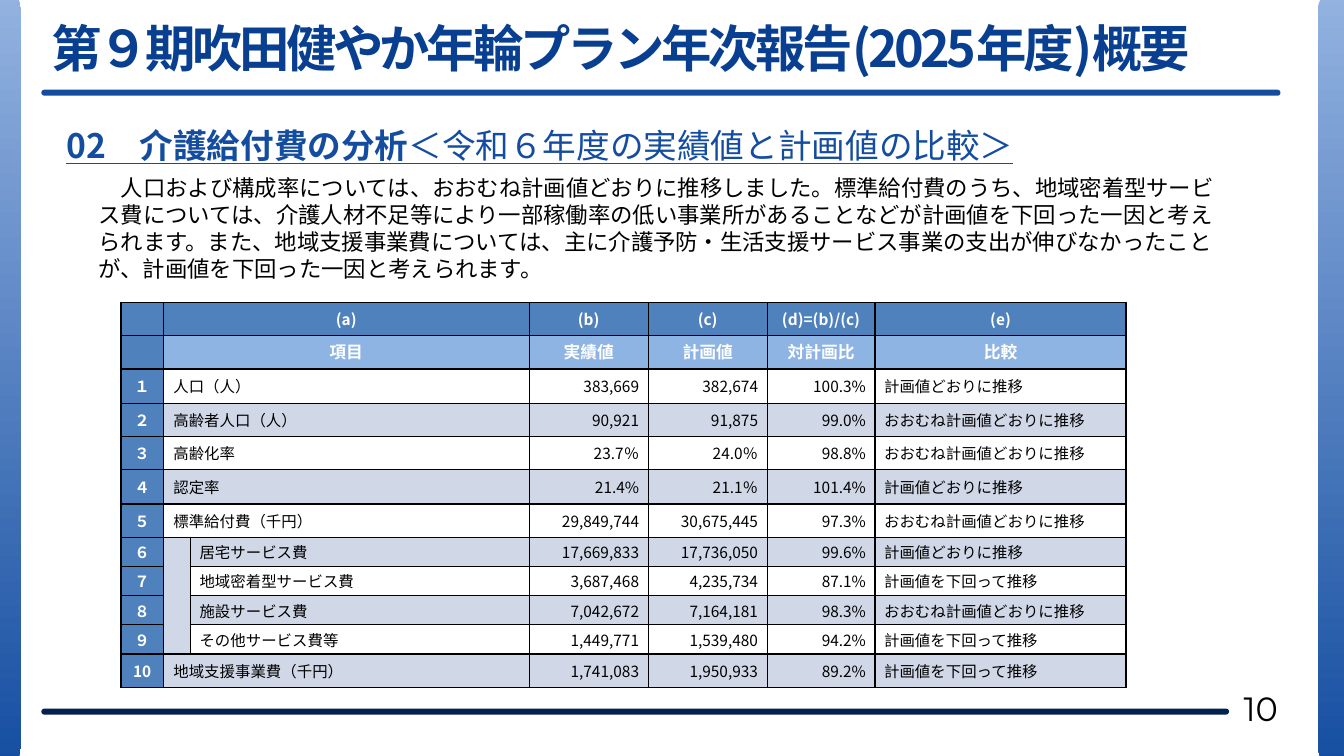
from lxml.etree import SubElement as Sub
from pptx import Presentation
from pptx.dml.color import RGBColor as RGB
from pptx.enum.shapes import MSO_SHAPE as SHAPE
from pptx.enum.text import MSO_ANCHOR as ANCHOR, MSO_AUTO_SIZE as FIT, PP_ALIGN as ALIGN
from pptx.oxml.ns import qn
from pptx.util import Pt

PX = 9144
SANS = "Noto Sans CJK JP"
HUES = {
    "title": "083F90", "blue": "144DA0", "navy": "03214E", "pale": "95B4E1",
    "head": "4F81BD", "sub": "8EB4E3", "band": "D0D8E8",
    "white": "FFFFFF", "black": "000000",
}
COLS = [42, 27, 336, 118, 118, 107, 249]
ROWS = [33, 33, 34] * 2 + [33] + [29] * 4 + [33]
HEADS = [
    ["(a)", "(b)", "(c)", "(d)=(b)/(c)", "(e)"],
    ["項目", "実績値", "計画値", "対計画比", "比較"],
]
SAME = "計画値どおりに推移"
NEAR = "おおむね計画値どおりに推移"
LOW = "計画値を下回って推移"
DATA = [
    ["１", "人口（人）", "383,669", "382,674", "100.3%", SAME],
    ["２", "高齢者人口（人）", "90,921", "91,875", "99.0%", NEAR],
    ["３", "高齢化率", "23.7％", "24.0％", "98.8%", NEAR],
    ["４", "認定率", "21.4%", "21.1％", "101.4%", SAME],
    ["５", "標準給付費（千円）", "29,849,744", "30,675,445", "97.3%", NEAR],
    ["６", "居宅サービス費", "17,669,833", "17,736,050", "99.6%", SAME],
    ["７", "地域密着型サービス費", "3,687,468", "4,235,734", "87.1%", LOW],
    ["８", "施設サービス費", "7,042,672", "7,164,181", "98.3%", NEAR],
    ["９", "その他サービス費等", "1,449,771", "1,539,480", "94.2%", LOW],
    ["10", "地域支援事業費（千円）", "1,741,083", "1,950,933", "89.2%", LOW],
]
NOTE = (
    "\u3000人口および構成率については、おおむね計画値どおりに推移しました。"
    "標準給付費のうち、地域密着型サービス費については、介護人材不足等により"
    "一部稼働率の低い事業所があることなどが計画値を下回った一因と考えられます。"
    "また、地域支援事業費については、主に介護予防・生活支援サービス事業の"
    "支出が伸びなかったことが、計画値を下回った一因と考えられます。"
).replace("\u3000", "　")


def hue(name):
    """Return the named colour."""
    return RGB.from_string(HUES[name])


def emu(box):
    """Turn a box in px into EMU."""
    return [n * PX for n in box]


def write(frame, words, size=11, color="black", bold=False, line=False, face=SANS,
          align=ALIGN.LEFT, lead=None, track=None):
    """Add a formatted run to the frame's first paragraph."""
    para = frame.paragraphs[0]
    para.alignment = align
    if lead:
        para.line_spacing = lead
    run = para.add_run()
    run.text = words
    font = run.font
    font.size, font.bold, font.underline, font.name = Pt(size), bold, line, face
    font.color.rgb = hue(color)
    props = run._r.get_or_add_rPr()
    Sub(props, qn("a:ea")).set("typeface", face)
    if track:
        props.set("spc", str(track))


def label(slide, box, anchor=ANCHOR.TOP):
    """Place an empty wrapping text box and return its frame."""
    frame = slide.shapes.add_textbox(*emu(box)).text_frame
    frame.word_wrap = True
    frame.vertical_anchor = anchor
    return frame


def bar(slide, box, color=None):
    """Place a round-ended bar, with a gradient when no colour is given."""
    shape = slide.shapes.add_shape(SHAPE.ROUNDED_RECTANGLE, *emu(box))
    shape.adjustments[0] = 0.5
    shape.shadow.inherit = False
    shape.line.fill.background()
    fill = shape.fill
    if color:
        fill.solid()
        fill.fore_color.rgb = hue(color)
    else:
        fill.gradient()
        fill.gradient_angle = 270
        for stop, name in zip(fill.gradient_stops, ("pale", "blue")):
            stop.color.rgb = hue(name)


def header(slide, box):
    """Place the title and the rule below it."""
    x, y, w, h = box
    title = slide.shapes.title
    title.left, title.top, title.width, title.height = emu((x, y, w - 19, h - 5))
    frame = title.text_frame
    frame.word_wrap = True
    frame.auto_size = FIT.NONE
    frame.vertical_anchor = ANCHOR.MIDDLE
    write(frame, "第９期吹田健やか年輪プラン年次報告(2025年度)概要", size=36,
          color="title", bold=True, lead=0.9, track=-250)
    bar(slide, (x, y + h - 6, w, 6), "blue")


def intro(slide, box):
    """Place the section heading and its comment."""
    x, y, w, h = box
    frame = label(slide, (x, y, 959, 50))
    style = dict(size=24, color="blue", line=True)
    write(frame, "02　介護給付費の分析", bold=True, **style)
    write(frame, "＜令和６年度の実績値と計画値の比較＞", **style)
    write(label(slide, (x + 32, y + 49, w - 32, h - 49)), NOTE, size=16)


def paint(cell, color):
    """Give a cell black borders, a fill and centred content."""
    props = cell._tc.get_or_add_tcPr()
    for side in ("lnL", "lnR", "lnT", "lnB"):
        edge = Sub(props, qn("a:" + side), w=str(Pt(1)))
        Sub(Sub(edge, qn("a:solidFill")), qn("a:srgbClr"), val=HUES["black"])
    cell.fill.solid()
    cell.fill.fore_color.rgb = hue(color)
    cell.vertical_anchor = ANCHOR.MIDDLE
    cell.margin_left = cell.margin_right = 9 * PX
    cell.margin_top = cell.margin_bottom = 0
    para = cell.text_frame.paragraphs[0]
    para.line_spacing = Pt(16)
    para.font.size = Pt(11)


def chart(slide, box):
    """Place the table of actual and planned values."""
    grid = slide.shapes.add_table(len(ROWS), len(COLS), *emu(box)).table
    grid.first_row = grid.horz_banding = False
    for col, wide in zip(grid.columns, COLS):
        col.width = wide * PX
    for row, high in zip(grid.rows, ROWS):
        row.height = high * PX
    for r in range(len(ROWS)):
        tone = ("head", "sub")[r] if r < 2 else ("white", "band")[r % 2]
        for c in range(len(COLS)):
            paint(grid.cell(r, c), "head" if c == 0 else tone)
    paint_gap = grid.cell(7, 1)
    paint_gap.merge(grid.cell(10, 1))
    for r, line in enumerate([["", *head] for head in HEADS] + DATA):
        nest = 7 <= r <= 10
        if not nest:
            item = grid.cell(r, 1)
            item.merge(grid.cell(r, 2))
            item.margin_left = item.margin_right = 10 * PX
        for c, words in zip((0, 2 if nest else 1, 3, 4, 5, 6), line):
            if not words:
                continue
            bold = r < 2 or c == 0
            align = ALIGN.CENTER if bold else ALIGN.RIGHT if 3 <= c <= 5 else ALIGN.LEFT
            write(grid.cell(r, c).text_frame, words, size=12 if r == 1 else 11,
                  color="white" if bold else "black", bold=bold, align=align)


def footer(slide, box):
    """Place the bottom rule and the page number."""
    x, y, w, h = box
    bar(slide, (x, y + 21, w - 73, 6), "navy")
    write(label(slide, (x + w - 83, y, 83, h), ANCHOR.MIDDLE), "10", size=24,
          face="Montserrat", align=ALIGN.CENTER)


def main():
    """Build and save the slide."""
    deck = Presentation()
    deck.slide_width, deck.slide_height = emu((1333, 750))
    slide = deck.slides.add_slide(deck.slide_layouts[5])
    for x in (-46, 1307):
        bar(slide, (x, -21, 67, 792))
    header(slide, (41, 11, 1229, 84))
    intro(slide, (56, 119, 1163, 167))
    chart(slide, (120, 300, sum(COLS), sum(ROWS)))
    footer(slide, (41, 682, 1251, 40))
    deck.save("out.pptx")


if __name__ == "__main__":
    main()
